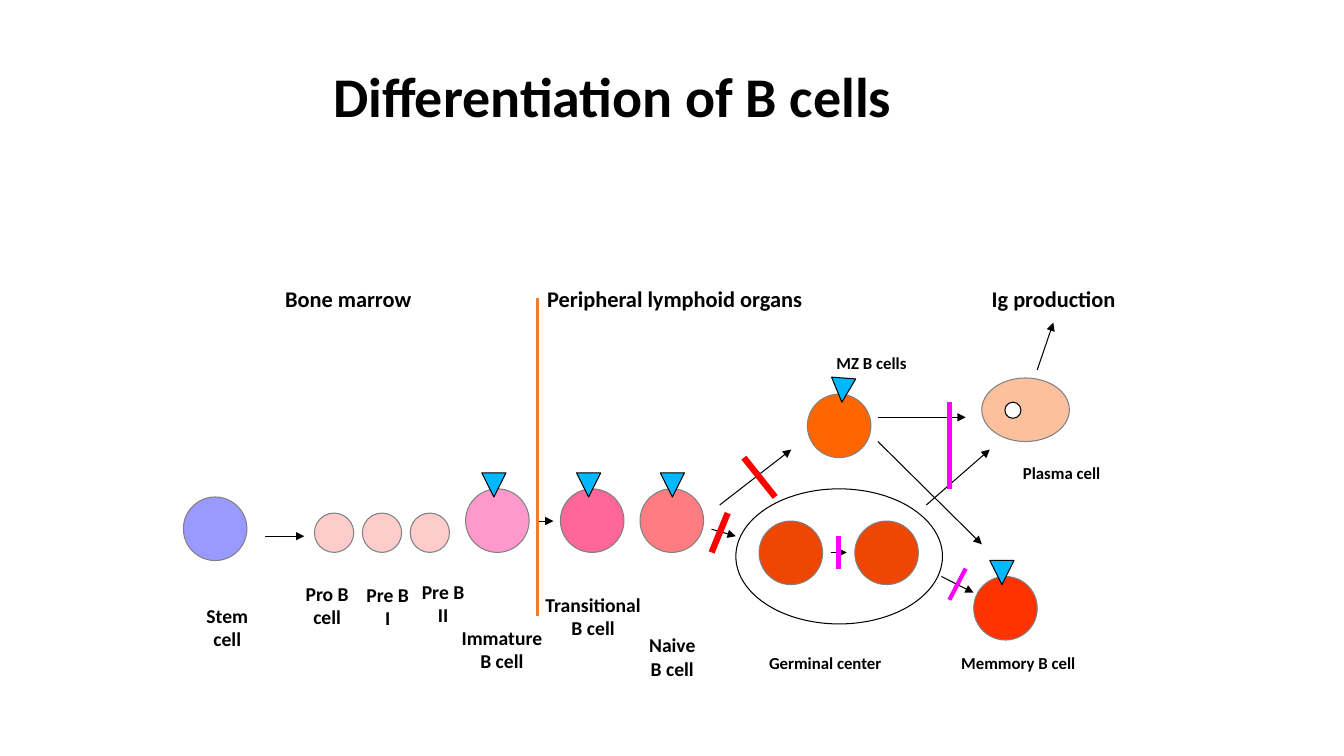
"""Build a slide that shows the differentiation of B cells."""
from lxml import etree
from pptx import Presentation
from pptx import util as u
from pptx.dml.color import RGBColor
from pptx.enum import shapes, text
from pptx.oxml import ns

BLACK = RGBColor(0x00, 0x00, 0x00)
WHITE = RGBColor(0xFF, 0xFF, 0xFF)
GREY = RGBColor(0x80, 0x80, 0x80)
ORANGE = RGBColor(0xED, 0x7D, 0x31)
RED = RGBColor(0xFF, 0x00, 0x00)
MAGENTA = RGBColor(0xFF, 0x00, 0xFF)
RECEPTOR = RGBColor(0x00, 0xB8, 0xFF)
STEM = RGBColor(0x99, 0x99, 0xFF)
PRECURSOR = RGBColor(0xFF, 0xCC, 0xCC)
IMMATURE = RGBColor(0xFF, 0x99, 0xCC)
TRANSITIONAL = RGBColor(0xFF, 0x66, 0x99)
NAIVE = RGBColor(0xFF, 0x7C, 0x80)
MARGINAL = RGBColor(0xFF, 0x66, 0x00)
GERMINAL = RGBColor(0xEF, 0x46, 0x03)
MEMORY = RGBColor(0xFF, 0x33, 0x00)
PLASMA = RGBColor(0xFC, 0xC0, 0x9E)

CELL = 45.4
PRE_CELL = 28.1
PRE_CELL_STEP = 34.2
RECEPTOR_SIZE = 17.3
RECEPTOR_RISE = 11.5

RECEPTOR_CELLS = [
    (332.6, 349.2, IMMATURE, 11.5, 180),
    (400.3, 349.2, TRANSITIONAL, 11.5, 180),
    (457.2, 349.2, NAIVE, 14.4, 180),
    (576.7, 281.5, MARGINAL, 16.6, 184.3),
    (695.5, 411.8, MEMORY, 11.5, 180),
]
PLAIN_CELLS = [
    (131, 355, STEM),
    (542.2, 372.2, GERMINAL),
    (610.6, 372.2, GERMINAL),
]
ARROWS = [
    (189.4, 383, 217.4, 383),
    (383.8, 372.2, 395.3, 372.2),
    (514.1, 360.7, 565.2, 321.1),
    (508.3, 378, 525.6, 383),
    (593.3, 394.6, 604.8, 394.6),
    (672.5, 411.8, 695.5, 423.4),
    (661.7, 360.7, 707, 321.1),
    (627.1, 298.1, 689.8, 298.1),
    (627.1, 315.4, 701.3, 388.8),
    (740.9, 264.2, 752.4, 230.4),
]
BARS = [
    (383.8, 213.1, 383.8, 439.9, ORANGE, 2.25),
    (531.4, 326.9, 553.7, 355, RED, 4.5),
    (519.8, 366.5, 508.3, 394.6, RED, 4.5),
    (599, 383, 599, 406.1, MAGENTA, 3),
    (689.8, 406.1, 678.2, 428.4, MAGENTA, 3),
    (678.2, 287.3, 678.2, 349.2, MAGENTA, 3),
]
HEADINGS = [
    ("Bone marrow", 196.6, 150),
    ("Peripheral lymphoid organs", 383.8, 230),
    ("Ig production", 701.3, 130),
]
LATE_LABELS = [
    ("Germinal center", 542.2, 463, 120),
    ("Memmory B cell", 679.5, 463, 120),
    ("Plasma cell", 723.6, 326.9, 90.7),
    ("MZ B cells", 590.4, 248.4, 73.4),
]
STAGE_LABELS = [
    ("Stem cell", 139.7, 427.7, CELL),
    ("Pro B cell", 211, 411.8, CELL),
    ("Pre B I", 254.2, 412.6, CELL),
    ("Pre B II", 293.8, 410.4, CELL),
    ("Immature B cell", 320.4, 443.5, 76.3),
    ("Transitional B cell", 381.6, 419.8, 84.2),
    ("Naive B cell", 452.9, 448.6, 54.7),
]


def apply(target, **values):
    """Set each given attribute on the target."""
    for name, value in values.items():
        setattr(target, name, value)


def write(box, words, size, align):
    """Put bold black words into a box."""
    frame = box.text_frame
    apply(frame, text=words, word_wrap=True, auto_size=text.MSO_AUTO_SIZE.NONE,
          vertical_anchor=text.MSO_ANCHOR.TOP)
    paragraph = frame.paragraphs[0]
    paragraph.alignment = align
    font = paragraph.runs[0].font
    apply(font, name="Calibri", size=u.Pt(size), bold=True)
    font.color.rgb = BLACK


def label(slide, words, left, top, width, size, align=text.PP_ALIGN.LEFT):
    """Add a text label."""
    height = size * 2.9 if align == text.PP_ALIGN.CENTER else size * 1.7
    box = slide.shapes.add_textbox(*map(u.Pt, (left, top, width, height)))
    write(box, words, size, align)


def figure(slide, kind, left, top, width, height, fill, outline, turn=0):
    """Add an outlined preset shape."""
    part = slide.shapes.add_shape(kind, *map(u.Pt, (left, top, width, height)))
    part.shadow.inherit = False
    part.rotation = turn
    if fill is None:
        part.fill.background()
    else:
        part.fill.solid()
        part.fill.fore_color.rgb = fill
    part.line.color.rgb = outline
    part.line.width = u.Pt(0.75)


def oval(slide, left, top, width, height, fill, outline=GREY):
    """Add a cell body or another round part."""
    figure(slide, shapes.MSO_SHAPE.OVAL, left, top, width, height, fill, outline)


def receptor_cell(slide, left, top, fill, shift, turn):
    """Add a cell with a surface receptor."""
    oval(slide, left, top, CELL, CELL, fill)
    figure(slide, shapes.MSO_SHAPE.ISOSCELES_TRIANGLE, left + shift,
           top - RECEPTOR_RISE, RECEPTOR_SIZE, RECEPTOR_SIZE, RECEPTOR, BLACK, turn)


def stroke(slide, x1, y1, x2, y2, color=BLACK, width=0.75, head=False):
    """Add a straight line, with an arrowhead on request."""
    link = slide.shapes.add_connector(shapes.MSO_CONNECTOR.STRAIGHT,
                                      *map(u.Pt, (x1, y1, x2, y2)))
    link.line.color.rgb = color
    link.line.width = u.Pt(width)
    if head:
        etree.SubElement(link.line._get_or_add_ln(), ns.qn("a:tailEnd"), type="triangle")
    etree.SubElement(link._element.spPr, ns.qn("a:effectLst"))


def main():
    """Build and save the slide."""
    deck = Presentation()
    apply(deck, slide_width=u.Pt(960), slide_height=u.Pt(540))
    slide = deck.slides.add_slide(deck.slide_layouts[5])
    title = slide.shapes.title
    apply(title, left=u.Pt(139.7), top=u.Pt(40.3), width=u.Pt(595.4), height=u.Pt(55.4))
    write(title, "Differentiation of B cells", 40, text.PP_ALIGN.CENTER)

    for left, top, fill in PLAIN_CELLS:
        oval(slide, left, top, CELL, CELL, fill)
    for stage in range(3):
        oval(slide, 224.6 + stage * PRE_CELL_STEP, 366.5, PRE_CELL, PRE_CELL, PRECURSOR)
    for cell in RECEPTOR_CELLS:
        receptor_cell(slide, *cell)
    oval(slide, 701.3, 270, 62.6, CELL, PLASMA)
    oval(slide, 717.8, 287.3, 11.5, 11.5, WHITE, BLACK)
    oval(slide, 525.6, 349.2, 147.6, 96.5, None, BLACK)

    for arrow in ARROWS:
        stroke(slide, *arrow, head=True)
    for bar in BARS:
        stroke(slide, *bar)
    for words, left, width in HEADINGS:
        label(slide, words, left, 200.2, width, 16)
    for late in LATE_LABELS:
        label(slide, *late, 12)
    for stage in STAGE_LABELS:
        label(slide, *stage, 14, text.PP_ALIGN.CENTER)
    deck.save("out.pptx")


if __name__ == "__main__":
    main()
